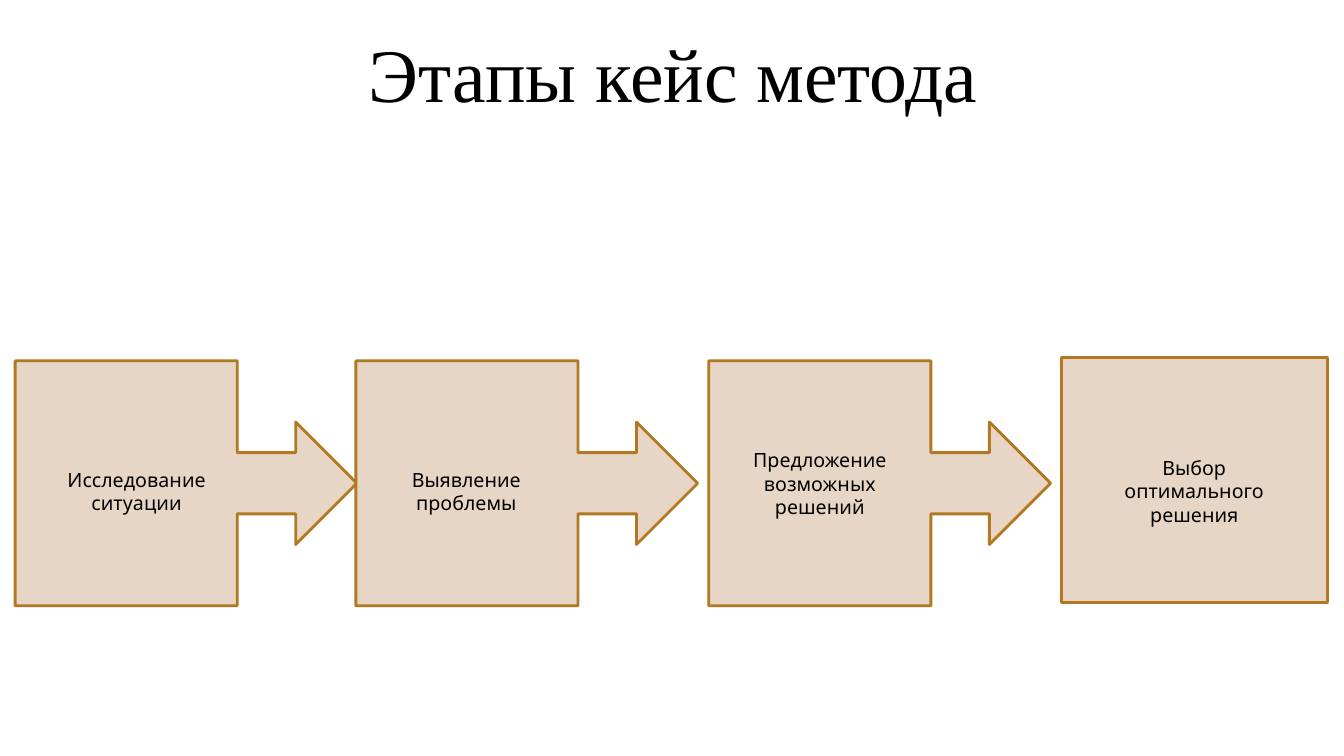
import pptx
import pptx.dml.color
import pptx.enum.shapes
import pptx.enum.text
import pptx.util
from pptx.util import Inches

COLORS = {"fill": "E7D6C5", "line": "B27822", "text": "000000"}
SHAPES = pptx.enum.shapes.MSO_SHAPE
ANCHOR = pptx.enum.text.MSO_ANCHOR
CALLOUT_TOP, CALLOUT_WIDTH, STAGE_HEIGHT = 3.58, 3.39, 2.43


def color(name):
    """Return the named palette colour."""
    return pptx.dml.color.RGBColor.from_string(COLORS[name])


def write_text(shape, text, font="Karla", size=14, anchor=ANCHOR.TOP):
    """Fill a shape with centred text, one paragraph per line."""
    frame = shape.text_frame
    frame.word_wrap = True
    frame.vertical_anchor = anchor
    frame.text = text
    for paragraph in frame.paragraphs:
        paragraph.alignment = pptx.enum.text.PP_ALIGN.CENTER
        paragraph.font.name = font
        paragraph.font.size = pptx.util.Pt(size)
        paragraph.font.color.rgb = color("text")


def add_label(slide, text, left, top, width, height, **text_format):
    """Add a text box that grows with its text."""
    label = slide.shapes.add_textbox(Inches(left), Inches(top), Inches(width), Inches(height))
    write_text(label, text, **text_format)
    label.text_frame.auto_size = pptx.enum.text.MSO_AUTO_SIZE.SHAPE_TO_FIT_TEXT


def add_stage(slide, kind, left, top, width):
    """Add one outlined stage shape and return it."""
    stage = slide.shapes.add_shape(kind, Inches(left), Inches(top), Inches(width), Inches(STAGE_HEIGHT))
    stage.shadow.inherit = False
    stage.fill.solid()
    stage.fill.fore_color.rgb = color("fill")
    stage.line.color.rgb = color("line")
    stage.line.width = pptx.util.Pt(2)
    return stage


def add_callout(slide, left):
    """Add a stage whose right side is an arrow."""
    return add_stage(slide, SHAPES.RIGHT_ARROW_CALLOUT, left, CALLOUT_TOP, CALLOUT_WIDTH)


def main():
    """Build the slide with the four stages of the case method."""
    presentation = pptx.Presentation()
    presentation.slide_width = Inches(13.33)
    presentation.slide_height = Inches(7.5)
    slide = presentation.slides.add_slide(presentation.slide_layouts[6])

    add_stage(slide, SHAPES.RECTANGLE, 10.53, 3.55, 2.64)
    add_label(slide, "Этапы кейс метода", 3.53, 0.22, 6.3, 1.01, font="Times New Roman", size=54)
    add_callout(slide, 0.15)
    add_label(slide, "Исследование ситуации", 0.25, 4.59, 2.21, 0.34)
    add_callout(slide, 3.53)
    add_label(slide, "Выявление проблемы", 3.6, 4.59, 2.05, 0.34)
    add_label(slide, "Выбор оптимального\nрешения", 10.83, 4.47, 2.03, 0.57)
    proposal = add_callout(slide, 7.03)
    write_text(proposal, "Предложение возможных решений", anchor=ANCHOR.MIDDLE)

    presentation.save("out.pptx")


if __name__ == "__main__":
    main()
